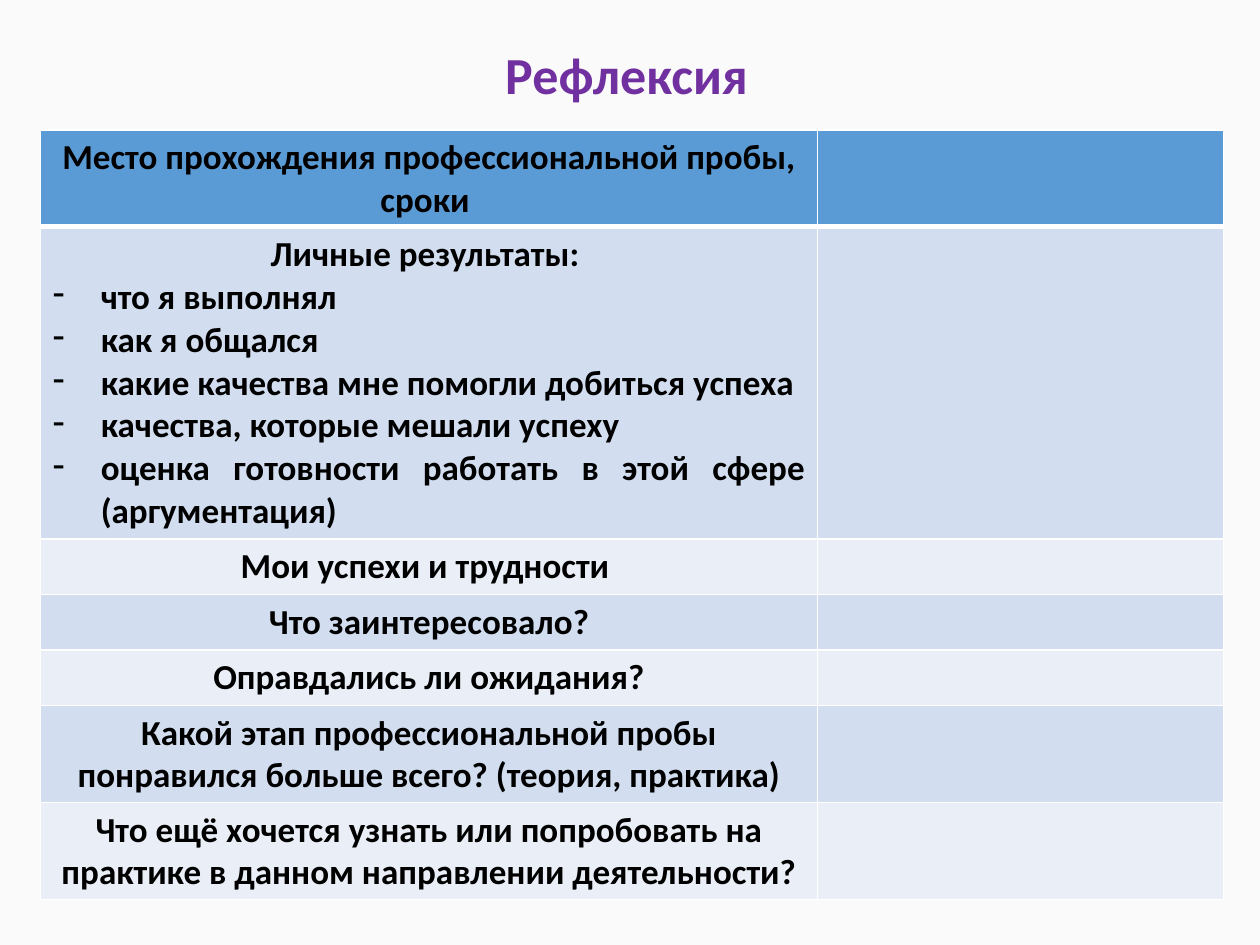
from lxml.etree import SubElement
from pptx import Presentation
from pptx.dml.color import RGBColor
from pptx.enum.text import MSO_ANCHOR, PP_ALIGN
from pptx.oxml.ns import qn
from pptx.util import Inches, Pt

PURPLE = RGBColor(0x70, 0x30, 0xA0)
BLACK = RGBColor(0, 0, 0)
WHITE = RGBColor(0xFF, 0xFF, 0xFF)
BACKGROUND = RGBColor(0xFA, 0xFA, 0xFA)
HEADER = RGBColor(0x5B, 0x9B, 0xD5)
BAND_DARK = RGBColor(0xD2, 0xDE, 0xEF)
BAND_LIGHT = RGBColor(0xEA, 0xEF, 0xF7)

COLUMN_WIDTHS = [6.17, 3.22]
RESULTS = [
    "что я выполнял",
    "как я общался ",
    "какие качества мне помогли добиться успеха ",
    "качества, которые мешали успеху",
    "оценка готовности работать в этой сфере (аргументация) ",
]
ROWS = [
    (0.77, "Место прохождения профессиональной пробы, сроки ", []),
    (2.48, "Личные результаты: ", RESULTS),
    (0.44, "Мои успехи и трудности ", []),
    (0.44, "Что заинтересовало?", []),
    (0.44, "Оправдались ли ожидания?", []),
    (0.77, "Какой этап профессиональной пробы понравился больше всего? "
           "(теория, практика)", []),
    (0.77, "Что ещё хочется узнать или попробовать на практике в данном "
           "направлении деятельности?", []),
]


def write_paragraph(paragraph, text, size=20, color=BLACK, align=PP_ALIGN.CENTER, bullet=None):
    paragraph.alignment = align
    if bullet:
        properties = paragraph._p.get_or_add_pPr()
        properties.set("marL", str(Inches(0.38)))
        properties.set("indent", str(-Inches(0.38)))
        SubElement(properties, qn("a:buFontTx"))
        SubElement(properties, qn("a:buChar"), char=bullet)
    span = paragraph.add_run()
    span.text = text
    span.font.name = "Calibri"
    span.font.size = Pt(size)
    span.font.bold = True
    span.font.color.rgb = color


def add_title(page, text):
    box = page.shapes.add_textbox(Inches(0.71), Inches(0.34), Inches(8.62), Inches(0.56))
    frame = box.text_frame
    frame.word_wrap = True
    frame.vertical_anchor = MSO_ANCHOR.MIDDLE
    paragraph = frame.paragraphs[0]
    paragraph.line_spacing = 0.9
    write_paragraph(paragraph, text, size=29.7, color=PURPLE)


def style_cell(cell, color, top_width, bottom_width):
    properties = cell._tc.get_or_add_tcPr()
    widths = {"a:lnL": 1, "a:lnR": 1, "a:lnT": top_width, "a:lnB": bottom_width}
    for side, width in widths.items():
        line = SubElement(properties, qn(side), w=str(Pt(width)))
        fill = SubElement(line, qn("a:solidFill"))
        SubElement(fill, qn("a:srgbClr"), val=str(WHITE))
    cell.fill.solid()
    cell.fill.fore_color.rgb = color
    cell.vertical_anchor = MSO_ANCHOR.MIDDLE


def row_color(index):
    if index == 0:
        return HEADER
    return BAND_DARK if index % 2 else BAND_LIGHT


def add_reflection_table(page):
    height = sum(row[0] for row in ROWS)
    table = page.shapes.add_table(
        len(ROWS), len(COLUMN_WIDTHS), Inches(0.32), Inches(1.03),
        Inches(sum(COLUMN_WIDTHS)), Inches(height)).table
    for column, width in zip(table.columns, COLUMN_WIDTHS):
        column.width = Inches(width)
    for index, (row_height, question, points) in enumerate(ROWS):
        row = table.rows[index]
        row.height = Inches(row_height)
        for cell in row.cells:
            style_cell(cell, row_color(index),
                       top_width=3 if index == 1 else 1,
                       bottom_width=3 if index == 0 else 1)
        frame = row.cells[0].text_frame
        write_paragraph(frame.paragraphs[0], question)
        for point in points:
            write_paragraph(frame.add_paragraph(), point, align=PP_ALIGN.JUSTIFY, bullet="-")


def main():
    deck = Presentation()
    deck.slide_width = Inches(10)
    deck.slide_height = Inches(7.5)
    page = deck.slides.add_slide(deck.slide_layouts[6])
    page.background.fill.solid()
    page.background.fill.fore_color.rgb = BACKGROUND
    add_title(page, "Рефлексия ")
    add_reflection_table(page)
    deck.save("out.pptx")


if __name__ == "__main__":
    main()
